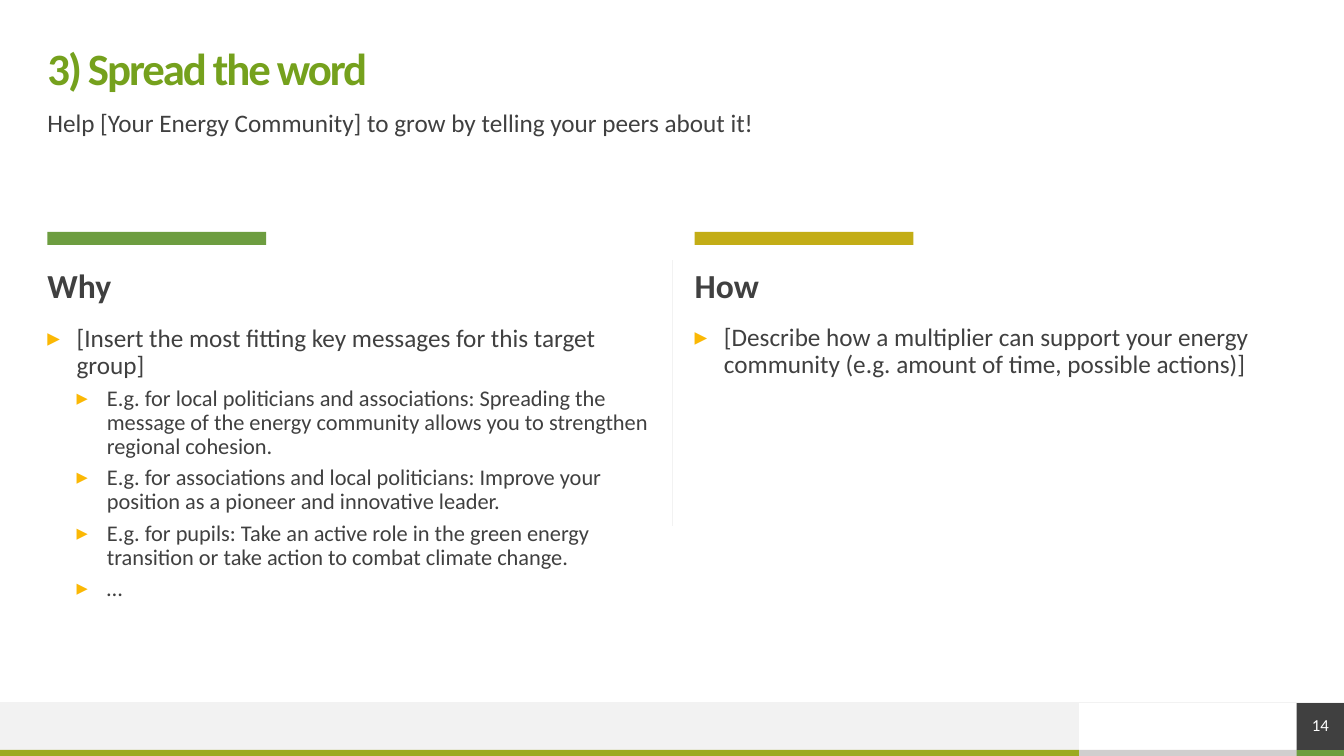
"""Build the "Spread the word" slide with its Why and How columns."""
import pptx
import pptx.dml.color
import pptx.enum.shapes
import pptx.enum.text
import pptx.util
from lxml import etree
from pptx.dml.color import RGBColor
from pptx.oxml.ns import qn
from pptx.util import Inches

GREEN_TITLE = RGBColor(0x75, 0xA1, 0x1D)
GREEN = RGBColor(0x6D, 0x9D, 0x40)
OLIVE = RGBColor(0x9C, 0xAA, 0x20)
MUSTARD = RGBColor(0xC3, 0xAD, 0x16)
AMBER = RGBColor(0xFB, 0xB8, 0x04)
DARK = RGBColor(0x40, 0x40, 0x40)
GREY = RGBColor(0xD0, 0xCE, 0xCE)
PALE = RGBColor(0xF2, 0xF2, 0xF2)
WHITE = RGBColor(0xFF, 0xFF, 0xFF)

MARGIN = 0.47
COLUMN_WIDTH = 5.98
BULLET_LEVELS = [(18, 0.29, 0.29), (16, 0.59, 0.3)]

deck = pptx.Presentation()
deck.slide_width, deck.slide_height = Inches(13.33), Inches(7.5)
page = deck.slides.add_slide(deck.slide_layouts[5])


def prepare_frame(box, anchor=pptx.enum.text.MSO_ANCHOR.TOP):
    frame = box.text_frame
    frame.margin_left = frame.margin_right = frame.margin_top = frame.margin_bottom = 0
    frame.word_wrap = True
    frame.auto_size = pptx.enum.text.MSO_AUTO_SIZE.NONE
    frame.vertical_anchor = anchor
    return frame


def write(para, text, size, color=DARK, bold=False, align=pptx.enum.text.PP_ALIGN.LEFT):
    para.alignment = align
    para.line_spacing = 0.9
    span = para.add_run()
    span.text = text
    span.font.name = "Calibri"
    span.font.size = pptx.util.Pt(size)
    span.font.bold = bold
    span.font.color.rgb = color
    return span


bars = [
    (10.7, 7.44, 2.17, 0.06, GREY),
    (0, 6.97, 10.7, 0.47, PALE),
    (0, 7.44, 10.7, 0.06, OLIVE),
    (12.86, 7.44, 0.47, 0.06, GREEN),
    (MARGIN, 2.3, 2.17, 0.13, GREEN),
    (6.89, 2.3, 2.17, 0.13, MUSTARD),
    (12.86, 6.97, 0.47, 0.47, DARK),
]
for left, top, width, height, color in bars:
    bar = page.shapes.add_shape(pptx.enum.shapes.MSO_SHAPE.RECTANGLE,
                                Inches(left), Inches(top), Inches(width), Inches(height))
    bar.shadow.inherit = False
    bar.fill.solid()
    bar.fill.fore_color.rgb = color
    bar.line.fill.background()
page_number = prepare_frame(bar, pptx.enum.text.MSO_ANCHOR.MIDDLE)
write(page_number.paragraphs[0], "14", 12, WHITE, align=pptx.enum.text.PP_ALIGN.CENTER)

for start_x, start_y, end_x, end_y in [(13.33, 6.97, 0, 6.97), (6.67, 2.58, 6.67, 5.22)]:
    rule = page.shapes.add_connector(pptx.enum.shapes.MSO_CONNECTOR.STRAIGHT,
                                     Inches(start_x), Inches(start_y),
                                     Inches(end_x), Inches(end_y))
    rule.line.color.rgb = PALE
    rule.line.width = pptx.util.Pt(0.5)
    etree.SubElement(rule._element.spPr, qn("a:effectLst"))

title = page.shapes.title
title.left, title.top = Inches(MARGIN), Inches(0.47)
title.width, title.height = Inches(12.4), Inches(0.47)
title_frame = prepare_frame(title, pptx.enum.text.MSO_ANCHOR.MIDDLE)
title_span = write(title_frame.paragraphs[0], "3) Spread the word", 32, GREEN_TITLE, True)
title_span._r.get_or_add_rPr().set("spc", "-150")

subtitle = page.shapes.add_textbox(Inches(MARGIN), Inches(1.1), Inches(12.4), Inches(0.39))
write(prepare_frame(subtitle).paragraphs[0],
      "Help [Your Energy Community] to grow by telling your peers about it!", 18)

columns = [
    (MARGIN, 3.23, "Why", [
        (0, "[Insert the most fitting key messages for this target group]"),
        (1, "E.g. for local politicians and associations: Spreading the message of the "
            "energy community allows you to strengthen regional cohesion."),
        (1, "E.g. for associations and local politicians: Improve your position as a "
            "pioneer and innovative leader."),
        (1, "E.g. for pupils: Take an active role in the green energy transition or take "
            "action to combat climate change."),
        (1, "…"),
    ]),
    (6.89, 3.22, "How", [
        (0, "[Describe how a multiplier can support your energy community "
            "(e.g. amount of time, possible actions)]"),
    ]),
]
for left, list_top, heading, items in columns:
    heading_box = page.shapes.add_textbox(Inches(left), Inches(2.67),
                                          Inches(COLUMN_WIDTH), Inches(0.39))
    write(prepare_frame(heading_box).paragraphs[0], heading, 24, bold=True)

    list_box = page.shapes.add_textbox(Inches(left), Inches(list_top),
                                       Inches(COLUMN_WIDTH), Inches(2.4))
    list_frame = prepare_frame(list_box)
    for index, (level, text) in enumerate(items):
        para = list_frame.add_paragraph() if index else list_frame.paragraphs[0]
        size, indent, hanging = BULLET_LEVELS[level]
        para.level = level
        properties = para._p.get_or_add_pPr()
        properties.set("marL", str(Inches(indent)))
        properties.set("indent", str(-Inches(hanging)))
        bullet_color = etree.SubElement(properties, qn("a:buClr"))
        etree.SubElement(bullet_color, qn("a:srgbClr"), val=str(AMBER))
        etree.SubElement(properties, qn("a:buFont"), typeface="Calibri")
        etree.SubElement(properties, qn("a:buChar"), char="▸")
        if index:
            para.space_before = pptx.util.Pt(5)
        write(para, text, size)

deck.save("out.pptx")
